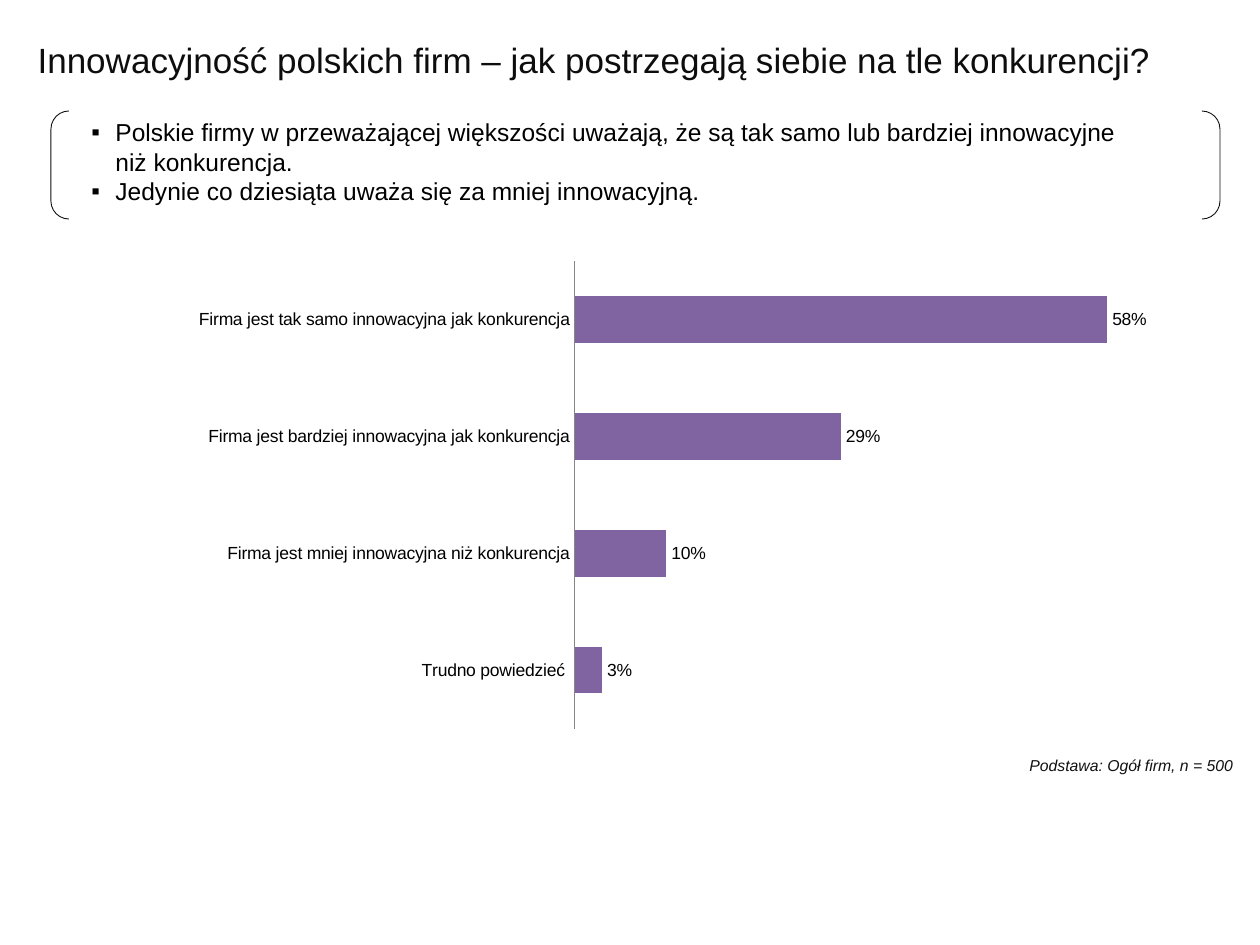
from dataclasses import dataclass

from lxml.etree import SubElement
from pptx import Presentation
from pptx.chart.data import CategoryChartData
from pptx.dml.color import RGBColor
from pptx.enum.chart import XL_CHART_TYPE as ChartType
from pptx.enum.chart import XL_LABEL_POSITION as LabelPosition
from pptx.enum.chart import XL_TICK_LABEL_POSITION as TickLabels
from pptx.enum.chart import XL_TICK_MARK as TickMark
from pptx.enum.shapes import MSO_SHAPE as Shape
from pptx.enum.text import MSO_ANCHOR as Anchor
from pptx.enum.text import MSO_AUTO_SIZE as AutoSize
from pptx.enum.text import PP_ALIGN as Align
from pptx.oxml.ns import qn
from pptx.util import Emu, Pt

PX_PER_INCH = 126
FONT = "Arial"
BLACK = RGBColor(0x00, 0x00, 0x00)
TITLE_INK = RGBColor(0x0D, 0x0D, 0x0D)
BRACKET_INK = RGBColor(0x0F, 0x0F, 0x0F)
NOTE_INK = RGBColor(0x11, 0x11, 0x11)
AXIS_GREY = RGBColor(0x86, 0x86, 0x86)
PURPLE = RGBColor(0x80, 0x64, 0xA2)


def px(value: int) -> Emu:
    return Emu(round(value * 914400 / PX_PER_INCH))


@dataclass(frozen=True)
class Area:
    left: int
    top: int
    width: int
    height: int

    def emu(self) -> tuple:
        return px(self.left), px(self.top), px(self.width), px(self.height)


@dataclass(frozen=True)
class TextStyle:
    size: int
    color: RGBColor
    italic: bool = False


@dataclass(frozen=True)
class Answer:
    label: str
    share: float


TITLE = "Innowacyjność polskich firm – jak postrzegają siebie na tle konkurencji?"
FINDINGS = [
    "Polskie firmy w przeważającej większości uważają, że są tak samo lub bardziej innowacyjne \vniż konkurencja.",
    "Jedynie co dziesiąta uważa się za mniej innowacyjną.",
]
ANSWERS = [
    Answer("Trudno powiedzieć ", 0.03),
    Answer("Firma jest mniej innowacyjna niż konkurencja", 0.10),
    Answer("Firma jest bardziej innowacyjna jak konkurencja", 0.29),
    Answer("Firma jest tak samo innowacyjna jak konkurencja", 0.58),
]
CHART_TEXT = TextStyle(10, BLACK)


def style_font(font, style: TextStyle) -> None:
    font.name = FONT
    font.size = Pt(style.size)
    font.italic = style.italic
    font.color.rgb = style.color


def style_runs(para, style: TextStyle) -> None:
    for span in para.runs:
        style_font(span.font, style)


def add_bullet(para, indent: int) -> None:
    properties = para._p.get_or_add_pPr()
    properties.set("marL", str(px(indent)))
    properties.set("indent", str(-px(indent)))
    SubElement(properties, qn("a:buFont"), typeface=FONT)
    SubElement(properties, qn("a:buChar"), char="▪")


def add_title(page, area: Area) -> None:
    title = page.shapes.title
    title.left, title.top, title.width, title.height = area.emu()
    frame = title.text_frame
    frame.text = TITLE
    frame.vertical_anchor = Anchor.MIDDLE
    frame.auto_size = AutoSize.NONE
    frame.paragraphs[0].alignment = Align.LEFT
    style_runs(frame.paragraphs[0], TextStyle(20, TITLE_INK))


def add_text(page, area: Area, lines: list[str], style: TextStyle, bullet_indent: int = 0, wrap: bool = True) -> None:
    frame = page.shapes.add_textbox(*area.emu()).text_frame
    frame.word_wrap = wrap
    frame.auto_size = AutoSize.SHAPE_TO_FIT_TEXT
    for index, line in enumerate(lines):
        para = frame.add_paragraph() if index else frame.paragraphs[0]
        para.text = line
        if bullet_indent:
            add_bullet(para, bullet_indent)
        style_runs(para, style)


def add_brackets(page, area: Area) -> None:
    brackets = page.shapes.add_shape(Shape.DOUBLE_BRACKET, *area.emu())
    brackets.shadow.inherit = False
    brackets.fill.background()
    brackets.line.color.rgb = BRACKET_INK
    brackets.line.width = Pt(0.5)


def set_plot_layout(chart, x: float, y: float, w: float, h: float) -> None:
    plot_area = chart._chartSpace.chart.plotArea
    layout = plot_area.find(qn("c:layout"))
    if layout is None:
        layout = SubElement(plot_area, qn("c:layout"))
        plot_area.insert(0, layout)
    manual = SubElement(layout, qn("c:manualLayout"))
    settings = {"layoutTarget": "inner", "xMode": "edge", "yMode": "edge", "x": x, "y": y, "w": w, "h": h}
    for name, value in settings.items():
        SubElement(manual, qn(f"c:{name}"), val=str(value))


def add_answer_chart(page, area: Area) -> None:
    data = CategoryChartData(number_format="0%")
    data.categories = [answer.label for answer in ANSWERS]
    data.add_series("Series 1", [answer.share for answer in ANSWERS])
    chart = page.shapes.add_chart(ChartType.BAR_CLUSTERED, *area.emu(), data).chart
    chart.has_legend = False
    chart.has_title = False
    style_font(chart.font, CHART_TEXT)
    set_plot_layout(chart, 0.43, 0.04, 0.55, 0.92)

    category_axis = chart.category_axis
    category_axis.major_tick_mark = TickMark.NONE
    category_axis.minor_tick_mark = TickMark.NONE
    category_axis.tick_label_position = TickLabels.NEXT_TO_AXIS
    category_axis.format.line.color.rgb = AXIS_GREY
    style_font(category_axis.tick_labels.font, CHART_TEXT)

    value_axis = chart.value_axis
    value_axis.visible = False
    value_axis.has_major_gridlines = False
    value_axis.minimum_scale = 0
    value_axis.maximum_scale = 0.7

    plot = chart.plots[0]
    plot.gap_width = 150
    plot.vary_by_categories = False
    bars = plot.series[0]
    bars.format.fill.solid()
    bars.format.fill.fore_color.rgb = PURPLE
    labels = bars.data_labels
    labels.show_value = True
    labels.number_format = "0%"
    labels.number_format_is_linked = False
    labels.position = LabelPosition.OUTSIDE_END
    style_font(labels.font, CHART_TEXT)


def main() -> None:
    deck = Presentation()
    deck.slide_width, deck.slide_height = px(1260), px(945)
    page = deck.slides.add_slide(deck.slide_layouts[5])
    add_title(page, Area(25, 0, 1181, 119))
    add_answer_chart(page, Area(72, 241, 1169, 508))
    add_brackets(page, Area(51, 111, 1169, 108))
    add_text(page, Area(79, 111, 1112, 102), FINDINGS, TextStyle(14, BLACK), bullet_indent=24)
    add_text(page, Area(1017, 750, 230, 32), ["Podstawa: Ogół firm, n = 500"], TextStyle(9, NOTE_INK, italic=True), wrap=False)
    deck.save("out.pptx")


if __name__ == "__main__":
    main()
